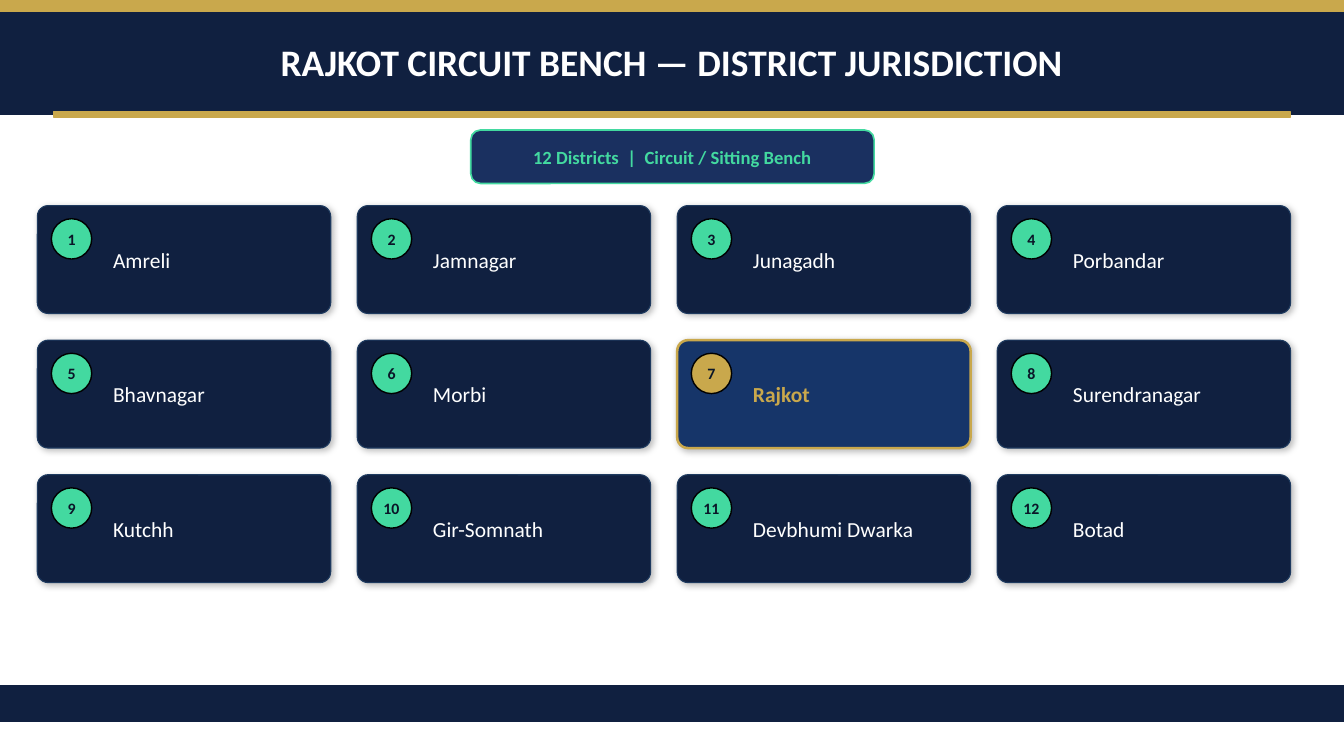
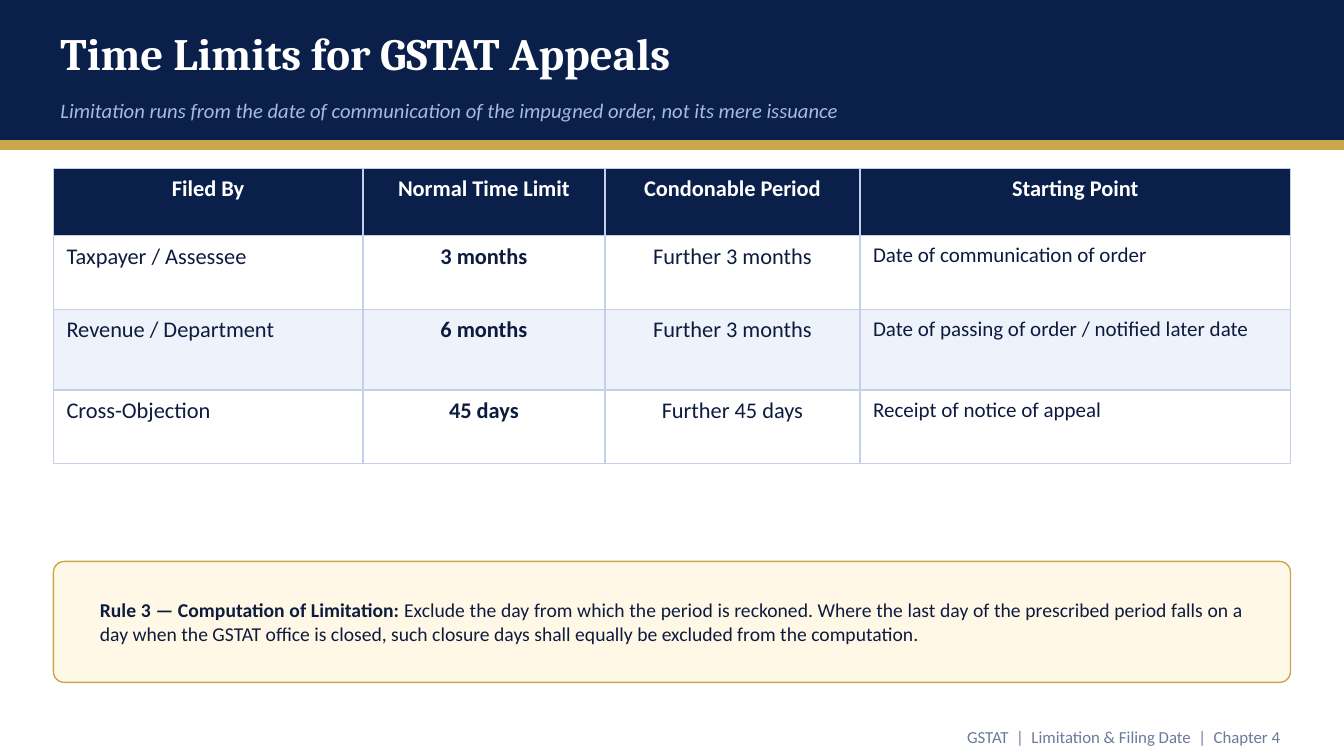
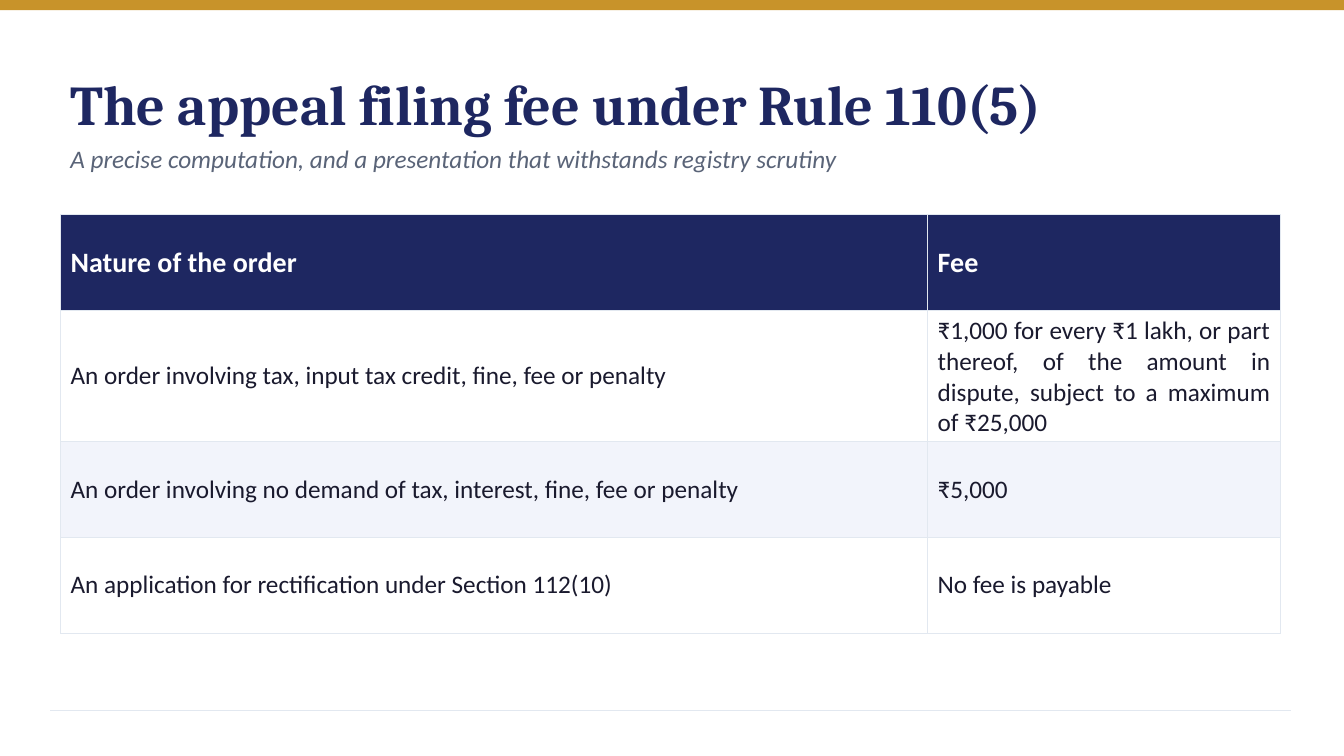
import dataclasses
import itertools
import typing

import lxml.etree
import pptx
import pptx.dml.color
import pptx.enum.shapes
import pptx.enum.text
import pptx.oxml.ns
import pptx.util

Inches = pptx.util.Inches
Pt = pptx.util.Pt
qn = pptx.oxml.ns.qn
ALIGN = pptx.enum.text.PP_ALIGN
ANCHOR = pptx.enum.text.MSO_ANCHOR
SHAPE = pptx.enum.shapes.MSO_SHAPE

COLORS = {
    "white": "FFFFFF", "black": "000000", "gold": "C9A84C",
    "bench_navy": "102040", "pill_navy": "1A3060", "card_edge": "1E3A5F",
    "seat_blue": "163569", "mint": "43D9A0", "badge_ink": "0A1628",
    "limit_navy": "0B1F4B", "limit_ink": "0D1B3E", "pale_blue": "A8BBDD",
    "limit_grid": "C5CFE8", "limit_band": "EEF2FA", "cream": "FFF8E6",
    "footer_gray": "6B7A99", "ochre": "C8932A", "fee_navy": "1E2761",
    "slate": "5A6478", "fee_grid": "E2E8F0", "fee_ink": "1A1A2E",
    "fee_band": "F2F4FB",
}
BODY_FONT = "Calibri"
TITLE_FONT = "Cambria"
PAGE_W = 13.33
PAGE_H = 7.5
MARGIN = 0.53
CONTENT_W = 12.27


class Box(typing.NamedTuple):
    x: float
    y: float
    w: float
    h: float


class Insets(typing.NamedTuple):
    left: float
    top: float
    right: float
    bottom: float


NO_INSETS = Insets(0, 0, 0, 0)
DEFAULT_INSETS = Insets(0.1, 0.05, 0.1, 0.05)


@dataclasses.dataclass(frozen=True)
class Style:
    size: float
    color: str
    bold: bool = False
    italic: bool = False
    font: str = BODY_FONT
    align: ALIGN = ALIGN.LEFT


@dataclasses.dataclass(frozen=True)
class Look:
    fill: str
    line: typing.Optional[str] = None
    width: float = 1
    radius: typing.Optional[float] = None
    shadow: bool = False


@dataclasses.dataclass(frozen=True)
class Grid:
    x: float
    y: float
    cols: tuple[float, ...]
    rows: tuple[float, ...]
    edge: str
    edge_width: float
    header: Style
    columns: tuple[Style, ...]
    header_fill: str
    band_fill: str
    insets: Insets
    anchor: ANCHOR


def rgb(name: str) -> pptx.dml.color.RGBColor:
    return pptx.dml.color.RGBColor.from_string(COLORS[name])


def place(box: Box) -> tuple[int, ...]:
    return tuple(Inches(v) for v in box)


def add_color(parent, name: str):
    fill = lxml.etree.SubElement(parent, qn("a:solidFill"))
    return lxml.etree.SubElement(fill, qn("a:srgbClr"), val=COLORS[name])


def add_run(p, text: str, style: Style) -> None:
    p.alignment = style.align
    r = p.add_run()
    r.text = text
    r.font.name = style.font
    r.font.size = Pt(style.size)
    r.font.bold = style.bold
    r.font.italic = style.italic
    r.font.color.rgb = rgb(style.color)


def write(sp, runs: list[tuple[str, Style]], insets: Insets = NO_INSETS) -> None:
    tf = sp.text_frame
    tf.word_wrap = True
    tf.vertical_anchor = ANCHOR.MIDDLE
    tf.margin_left, tf.margin_top, tf.margin_right, tf.margin_bottom = place(insets)
    for text, style in runs:
        add_run(tf.paragraphs[0], text, style)


def add_text(slide, box: Box, text: str, style: Style, insets: Insets = NO_INSETS) -> None:
    write(slide.shapes.add_textbox(*place(box)), [(text, style)], insets)


def add_shadow(sp) -> None:
    effects = sp._element.spPr.find(qn("a:effectLst"))
    shadow = lxml.etree.SubElement(
        effects, qn("a:outerShdw"), blurRad=str(Pt(5)), dist=str(Pt(2)),
        dir="2700000", algn="bl", rotWithShape="0")
    color = lxml.etree.SubElement(shadow, qn("a:srgbClr"), val=COLORS["black"])
    lxml.etree.SubElement(color, qn("a:alpha"), val="25000")


def add_shape(slide, kind: SHAPE, box: Box, look: Look):
    sp = slide.shapes.add_shape(kind, *place(box))
    sp.fill.solid()
    sp.fill.fore_color.rgb = rgb(look.fill)
    if look.line:
        sp.line.color.rgb = rgb(look.line)
        sp.line.width = Pt(look.width)
    else:
        sp.line.fill.background()
    if look.radius is not None:
        sp.adjustments[0] = look.radius
    sp.shadow.inherit = False
    if look.shadow:
        add_shadow(sp)
    return sp


def add_band(slide, y: float, h: float, color: str, x: float = 0,
             w: float = PAGE_W, outlined: bool = True) -> None:
    look = Look(color, color if outlined else None)
    add_shape(slide, SHAPE.RECTANGLE, Box(x, y, w, h), look)


def add_rule(slide, x1: float, x2: float, y: float, color: str) -> None:
    line = slide.shapes.add_connector(
        pptx.enum.shapes.MSO_CONNECTOR.STRAIGHT,
        Inches(x1), Inches(y), Inches(x2), Inches(y))
    line.line.color.rgb = rgb(color)
    line.line.width = Pt(1)
    lxml.etree.SubElement(line._element.spPr, qn("a:effectLst"))


def style_cell(cell, grid: Grid, fill: str) -> None:
    tc_pr = cell._tc.get_or_add_tcPr()
    for side in ("a:lnL", "a:lnR", "a:lnT", "a:lnB"):
        edge = lxml.etree.SubElement(tc_pr, qn(side), w=str(Pt(grid.edge_width)))
        add_color(edge, grid.edge)
    cell.fill.solid()
    cell.fill.fore_color.rgb = rgb(fill)
    cell.vertical_anchor = grid.anchor
    (cell.margin_left, cell.margin_top,
     cell.margin_right, cell.margin_bottom) = place(grid.insets)


def add_table(slide, grid: Grid, rows: list[tuple[str, ...]]):
    box = Box(grid.x, grid.y, sum(grid.cols), sum(grid.rows))
    table = slide.shapes.add_table(len(rows), len(grid.cols), *place(box)).table
    table.first_row = False
    table.horz_banding = False
    for column, width in zip(table.columns, grid.cols):
        column.width = Inches(width)
    for row, height in zip(table.rows, grid.rows):
        row.height = Inches(height)
    for i, texts in enumerate(rows):
        if i == 0:
            fill = grid.header_fill
        else:
            fill = "white" if i % 2 else grid.band_fill
        for j, text in enumerate(texts):
            cell = table.cell(i, j)
            style_cell(cell, grid, fill)
            style = grid.columns[j] if i else grid.header
            add_run(cell.text_frame.paragraphs[0], text, style)
    return table


def add_district(slide, box: Box, number: int, name: str, seat: bool) -> None:
    if seat:
        look = Look("seat_blue", "gold", 1.8, 0.1, True)
    else:
        look = Look("bench_navy", "card_edge", 0.8, 0.1, True)
    card = add_shape(slide, SHAPE.ROUNDED_RECTANGLE, box, look)
    label = Style(15.3, "gold" if seat else "white", bold=seat)
    write(card, [(name, label)], Insets(0.72, 0.05, 0.18, 0.05))
    badge = add_shape(slide, SHAPE.OVAL, Box(box.x + 0.14, box.y + 0.13, 0.4, 0.4),
                      Look("gold" if seat else "mint", "black"))
    write(badge, [(str(number), Style(11.3, "badge_ink", True, align=ALIGN.CENTER))])


def build_districts(slide) -> None:
    add_band(slide, 0, 0.13, "gold")
    add_band(slide, 0.13, 1, "bench_navy")
    add_band(slide, 1.11, 0.05, "gold", MARGIN, CONTENT_W)
    add_text(slide, Box(MARGIN, 0.13, CONTENT_W, 0.97),
             "RAJKOT CIRCUIT BENCH — DISTRICT JURISDICTION",
             Style(26.7, "white", True, align=ALIGN.CENTER))
    pill = add_shape(slide, SHAPE.ROUNDED_RECTANGLE, Box(4.67, 1.29, 4, 0.53),
                     Look("pill_navy", "mint", 1.2, 0.18))
    write(pill, [("12 Districts  |  Circuit / Sitting Bench",
                  Style(13.3, "mint", True, align=ALIGN.CENTER))])

    districts = ["Amreli", "Jamnagar", "Junagadh", "Porbandar",
                 "Bhavnagar", "Morbi", "Rajkot", "Surendranagar",
                 "Kutchh", "Gir-Somnath", "Devbhumi Dwarka", "Botad"]
    left, right, top, bottom = 0.37, 12.8, 2.04, 5.78
    card_w, card_h, n_cols, n_rows = 2.91, 1.07, 4, 3
    step_x = (right - left - card_w) / (n_cols - 1)
    step_y = (bottom - top - card_h) / (n_rows - 1)
    cells = itertools.product(range(n_rows), range(n_cols))
    for number, ((row, col), name) in enumerate(zip(cells, districts), 1):
        box = Box(left + col * step_x, top + row * step_y, card_w, card_h)
        add_district(slide, box, number, name, name == "Rajkot")
    add_band(slide, 6.8, 0.36, "bench_navy")


def build_time_limits(slide) -> None:
    add_band(slide, 0, 1.4, "limit_navy")
    add_band(slide, 1.4, 0.08, "gold")
    add_text(slide, Box(0.6, 0.16, 12.13, 0.73), "Time Limits for GSTAT Appeals",
             Style(32, "white", True, font=TITLE_FONT))
    add_text(slide, Box(0.6, 0.87, 12.13, 0.45),
             "Limitation runs from the date of communication of the impugned order, "
             "not its mere issuance", Style(14.7, "pale_blue", italic=True))

    party = Style(16, "limit_ink")
    period = dataclasses.replace(party, align=ALIGN.CENTER)
    limit = dataclasses.replace(period, bold=True)
    start = dataclasses.replace(party, size=15)
    grid = Grid(MARGIN, 1.67, (3.07, 2.4, 2.53, 4.27), (0.67, 0.73, 0.8, 0.73),
                "limit_grid", 1, dataclasses.replace(limit, color="white"),
                (party, limit, period, start), "limit_navy", "limit_band",
                Insets(0.13, 0.07, 0.13, 0.07), ANCHOR.TOP)
    add_table(slide, grid, [
        ("Filed By", "Normal Time Limit", "Condonable Period", "Starting Point"),
        ("Taxpayer / Assessee", "3 months", "Further 3 months",
         "Date of communication of order"),
        ("Revenue / Department", "6 months", "Further 3 months",
         "Date of passing of order / notified later date"),
        ("Cross-Objection", "45 days", "Further 45 days", "Receipt of notice of appeal"),
    ])

    note = Style(14, "limit_ink", align=ALIGN.JUSTIFY)
    sp = add_shape(slide, SHAPE.ROUNDED_RECTANGLE, Box(MARGIN, 5.57, CONTENT_W, 1.2),
                   Look("cream", "gold", 1, 0.09))
    write(sp, [
        ("Rule 3 — Computation of Limitation: ", dataclasses.replace(note, bold=True)),
        ("Exclude the day from which the period is reckoned. Where the last day of the "
         "prescribed period falls on a day when the GSTAT office is closed, such closure "
         "days shall equally be excluded from the computation.", note),
    ], Insets(0.43, 0.1, 0.43, 0.1))
    add_text(slide, Box(MARGIN, 7.17, CONTENT_W, 0.27),
             "GSTAT  |  Limitation & Filing Date  |  Chapter 4",
             Style(12, "footer_gray", align=ALIGN.RIGHT), DEFAULT_INSETS)


def build_filing_fee(slide) -> None:
    add_band(slide, 0, 0.1, "ochre", outlined=False)
    add_text(slide, Box(0.6, 0.67, 12, 0.7), "The appeal filing fee under Rule 110(5)",
             Style(40, "fee_navy", True, font=TITLE_FONT), DEFAULT_INSETS)
    add_text(slide, Box(0.6, 1.37, 12, 0.4),
             "A precise computation, and a presentation that withstands registry scrutiny",
             Style(18, "slate", italic=True), DEFAULT_INSETS)

    body = Style(18, "fee_ink")
    grid = Grid(0.6, 2.13, (8.6, 3.5), (0.95,) * 4, "fee_grid", 0.5,
                Style(20, "white", True), (body, body), "fee_navy", "fee_band",
                DEFAULT_INSETS, ANCHOR.MIDDLE)
    table = add_table(slide, grid, [
        ("Nature of the order", "Fee"),
        ("An order involving tax, input tax credit, fine, fee or penalty",
         "₹1,000 for every ₹1 lakh, or part thereof, of the amount in dispute, "
         "subject to a maximum of ₹25,000"),
        ("An order involving no demand of tax, interest, fine, fee or penalty", "₹5,000"),
        ("An application for rectification under Section 112(10)", "No fee is payable"),
    ])
    table.cell(1, 1).text_frame.paragraphs[0].alignment = ALIGN.JUSTIFY
    add_rule(slide, 0.5, 12.8, 7.05, "fee_grid")


def main() -> None:
    prs = pptx.Presentation()
    prs.slide_width = Inches(PAGE_W)
    prs.slide_height = Inches(PAGE_H)
    for build in (build_districts, build_time_limits, build_filing_fee):
        build(prs.slides.add_slide(prs.slide_layouts[6]))
    prs.save("out.pptx")


if __name__ == "__main__":
    main()
